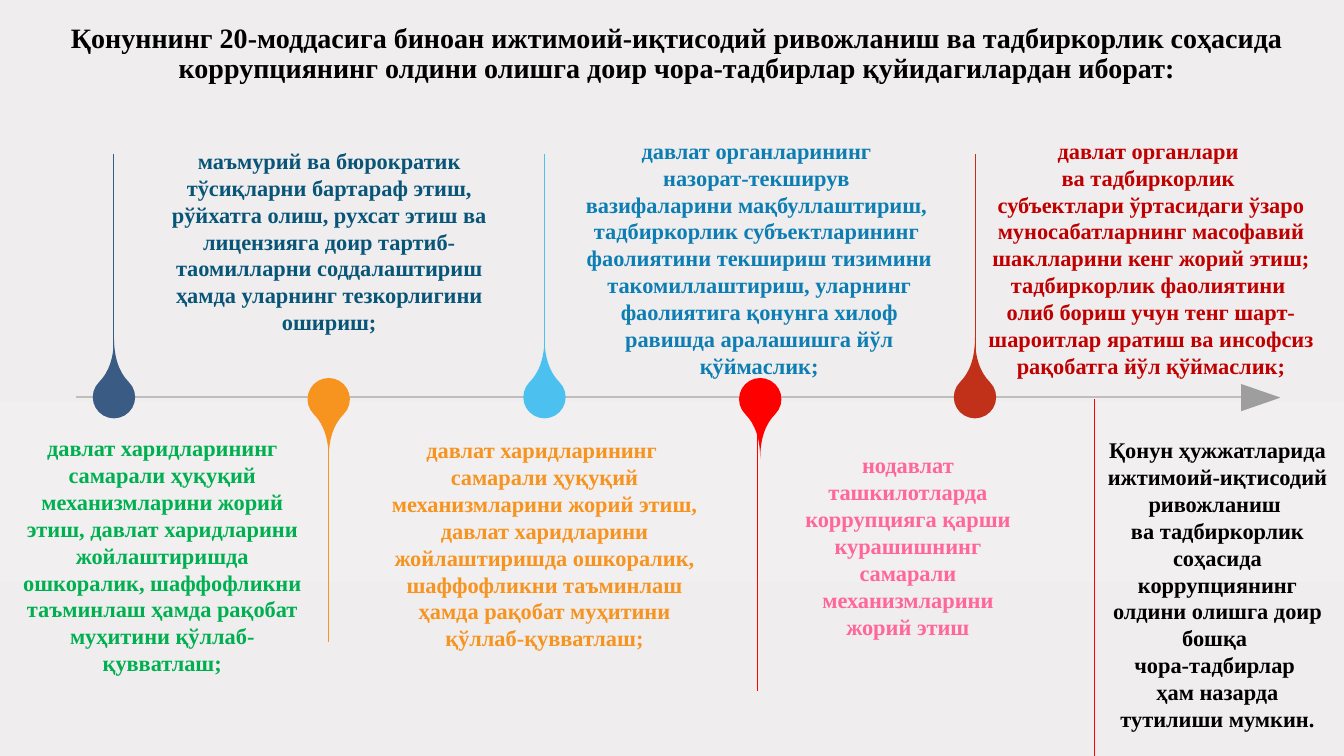
"""Build a timeline slide of anti-corruption measures in business and the economy."""
from copy import deepcopy

from pptx import Presentation
from pptx.dml.color import RGBColor
from pptx.enum.shapes import MSO_CONNECTOR, MSO_SHAPE
from pptx.enum.text import MSO_ANCHOR, PP_ALIGN
from pptx.oxml.ns import qn
from pptx.oxml.xmlchemy import OxmlElement
from pptx.util import Inches, Pt

STRAIGHT = MSO_CONNECTOR.STRAIGHT
TEAR, TRIANGLE = MSO_SHAPE.TEAR, MSO_SHAPE.ISOSCELES_TRIANGLE
CENTER, TOP = PP_ALIGN.CENTER, MSO_ANCHOR.TOP
color = RGBColor.from_string

deck = Presentation()
deck.slide_width, deck.slide_height = Inches(13.33), Inches(7.5)
page = deck.slides.add_slide(deck.slide_layouts[6])

backdrop = page.background.fill
backdrop.gradient()
backdrop.gradient_angle = 270
stop_list = page._element.find(".//" + qn("a:gsLst"))
for _ in range(2):
    stop_list.append(deepcopy(stop_list[-1]))
shades = [(0, "EFEDEE"), (0.53, "F1EFF0"), (0.77, "EFEDEE"), (1, "EFEBEC")]
for stop, (position, shade) in zip(backdrop.gradient_stops, shades):
    stop.position = position
    stop.color.rgb = color(shade)


def add_line(x1, y1, x2, y2, shade, width):
    line = page.shapes.add_connector(STRAIGHT, Inches(x1), Inches(y1), Inches(x2), Inches(y2))
    line.line.color.rgb = color(shade)
    line.line.width = Pt(width)
    line._element.spPr.append(OxmlElement("a:effectLst"))


def add_solid(kind, left, top, width, height, rotation, shade):
    solid = page.shapes.add_shape(kind, Inches(left), Inches(top), Inches(width), Inches(height))
    solid.rotation = rotation
    solid.shadow.inherit = False
    solid.fill.solid()
    solid.fill.fore_color.rgb = color(shade)
    solid.line.fill.background()
    return solid


add_line(0.75, 3.94, 12.59, 3.94, "BEBEBE", 1.5)
add_solid(TRIANGLE, 12.37, 3.75, 0.27, 0.39, 90, "9E9E9E")

UP, DOWN = 315, 135
pins = [
    (0.92, 3.73, UP, 1.12, 4.15, 1.53, "3A5C84"),
    (5.19, 3.73, UP, 5.4, 4.15, 1.53, "4CC1EF"),
    (9.46, 3.73, UP, 9.67, 4.15, 1.53, "C13018"),
    (3.05, 3.75, DOWN, 3.26, 3.75, 6.37, "F7931F"),
    (7.33, 3.75, DOWN, 7.51, 4.24, 6.86, "FF0000"),
]
for left, top, rotation, stem, start, end, shade in pins:
    drop = add_solid(TEAR, left, top, 0.42, 0.42, rotation, shade)
    drop.adjustments[0] = 2
    add_line(stem, start, stem, end, shade, 0.5)
add_line(10.85, 3.96, 10.85, 7.5, "FF0000", 0.5)

title = (
    "Қонуннинг 20-моддасига биноан ижтимоий-иқтисодий ривожланиш ва тадбиркорлик соҳасида "
    "коррупциянинг олдини олишга доир чора-тадбирлар қуйидагилардан иборат:"
)
procurement = (
    "самарали ҳуқуқий механизмларини жорий этиш, давлат харидларини жойлаштиришда "
    "ошкоралик, шаффофликни таъминлаш ҳамда рақобат муҳитини қўллаб-қувватлаш;"
)
texts = [
    (0, 0.19, 13.33, 0.81, 0.1, 0, 20, "000000", title),
    (1.54, 1.41, 3.45, 1.99, 0, 0, 16, "095578",
     "маъмурий ва бюрократик тўсиқларни бартараф этиш, рўйхатга олиш, рухсат этиш ва "
     "лицензияга доир тартиб-таомилларни соддалаштириш ҳамда уларнинг тезкорлигини ошириш;"),
    (5.69, 1.31, 3.68, 2.52, 0, 0, 16, "0D7EB3",
     "давлат органларининг \nназорат-текширув \nвазифаларини мақбуллаштириш, \n"
     "тадбиркорлик субъектларининг \nфаолиятини текшириш тизимини такомиллаштириш, "
     "уларнинг фаолиятига қонунга хилоф равишда аралашишга йўл қўймаслик;"),
    (9.76, 1.31, 3.31, 2.52, 0, 0, 16, "C00000",
     "давлат органлари \nва тадбиркорлик \nсубъектлари ўртасидаги ўзаро муносабатларнинг "
     "масофавий шаклларини кенг жорий этиш; тадбиркорлик фаолиятини \nолиб бориш учун тенг "
     "шарт-шароитлар яратиш ва инсофсиз рақобатга йўл қўймаслик;"),
    (3.79, 4.28, 3.22, 2.26, 0, 0, 16, "F7931F", "давлат харидларининг \n" + procurement),
    (0.11, 4.26, 3, 2.52, 0.1, 0.1, 16, "00B050", "давлат харидларининг " + procurement),
    (10.85, 4.28, 2.45, 3.06, 0.1, 0.1, 16, "000000",
     "Қонун ҳужжатларида ижтимоий-иқтисодий ривожланиш \nва тадбиркорлик соҳасида "
     "коррупциянинг олдини олишга доир бошқа \nчора-тадбирлар \nҳам назарда тутилиши мумкин."),
    (7.83, 4.43, 2.35, 1.99, 0.1, 0.1, 16, "FF6699",
     "нодавлат ташкилотларда коррупцияга қарши курашишнинг самарали механизмларини жорий этиш"),
]
for left, top, width, height, inset_left, inset_right, size, shade, wording in texts:
    box = page.shapes.add_textbox(Inches(left), Inches(top), Inches(width), Inches(height))
    frame = box.text_frame
    frame.word_wrap = True
    frame.vertical_anchor = TOP
    frame.margin_left, frame.margin_right = Inches(inset_left), Inches(inset_right)
    para = frame.paragraphs[0]
    para.text = wording
    para.alignment = CENTER
    para.line_spacing = 0.9 if wording == title else 1.0
    para.font.name = "Times New Roman"
    para.font.size = Pt(size)
    para.font.bold = True
    para.font.color.rgb = color(shade)

deck.save("out.pptx")
